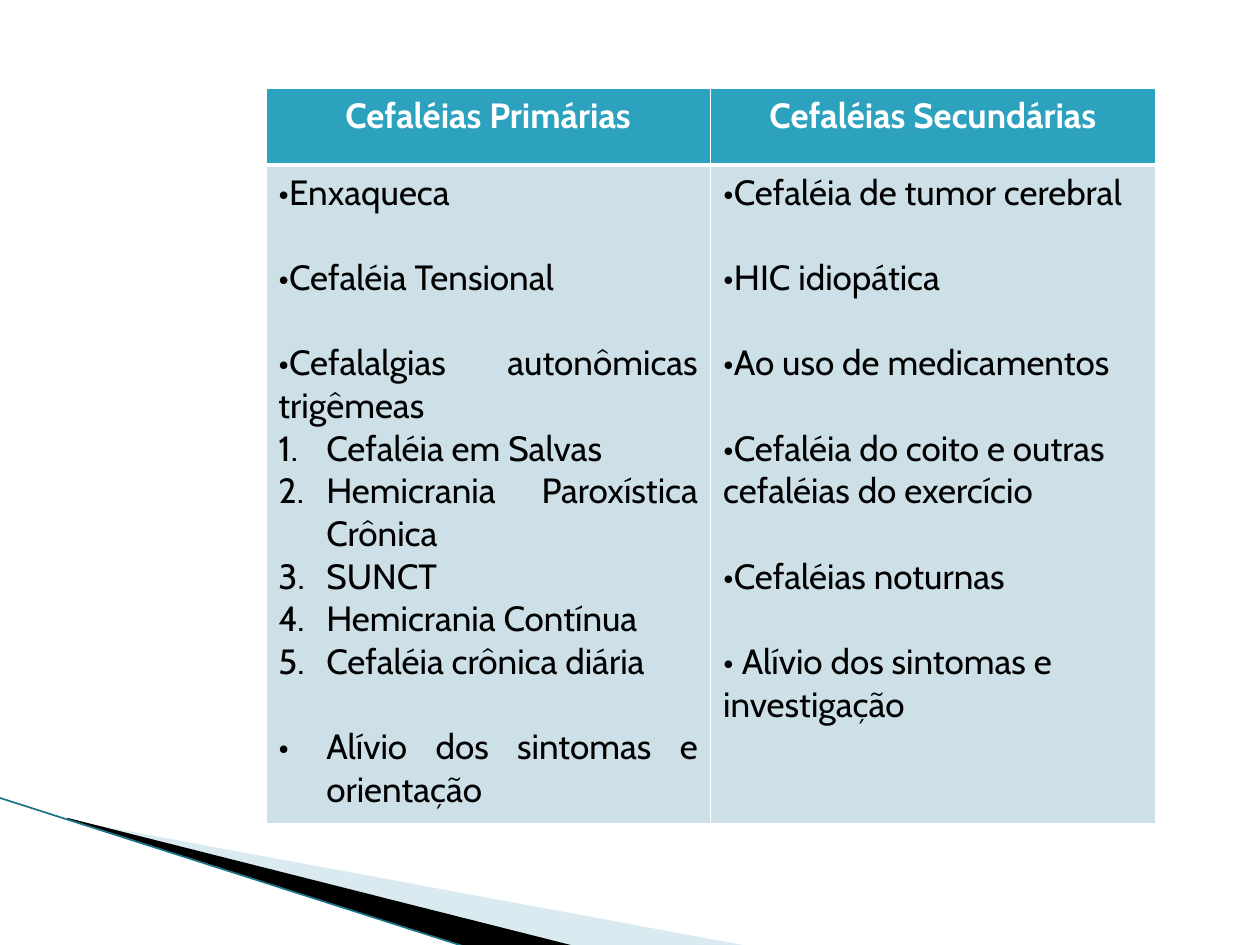
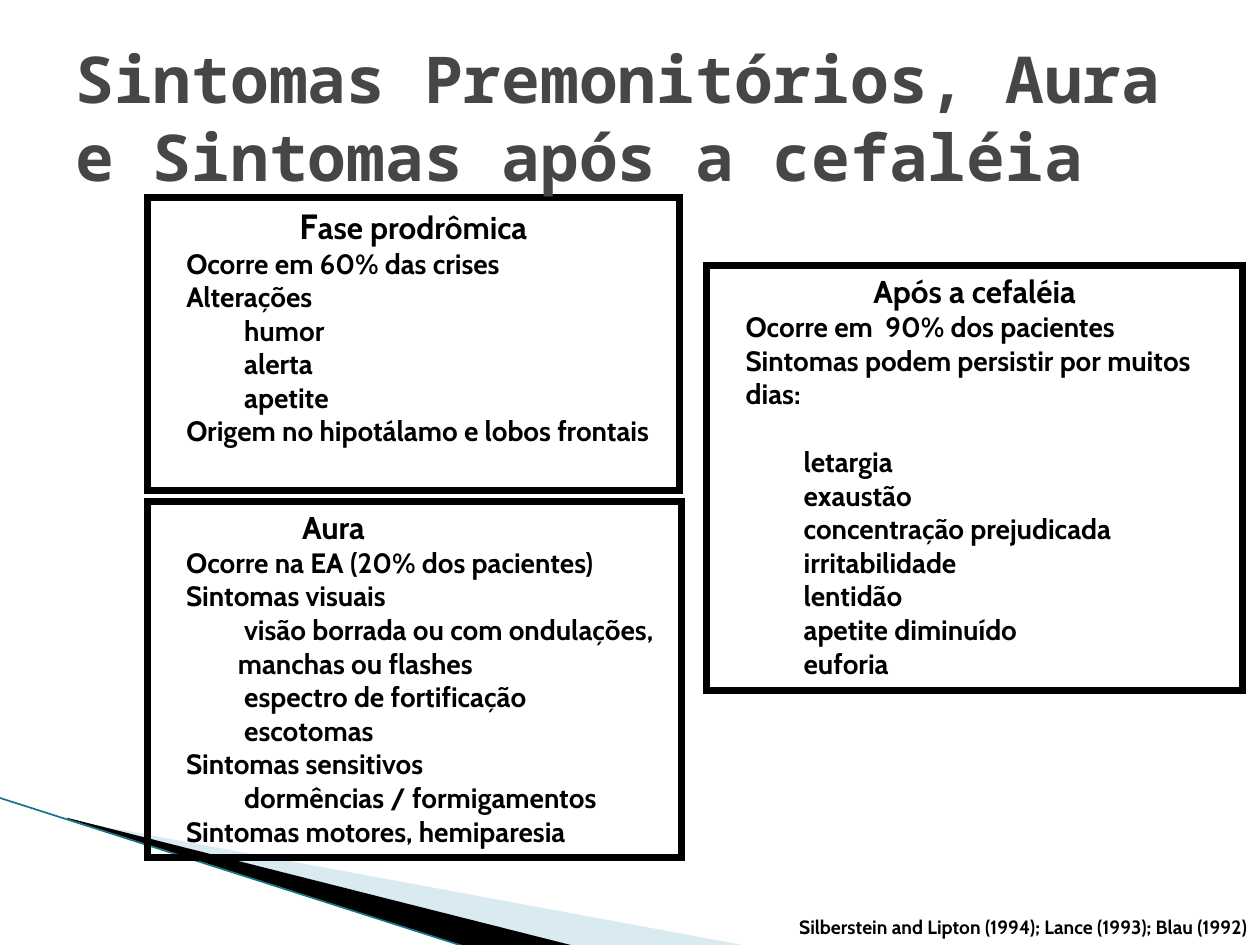
from pptx import Presentation
from pptx import util as u
from pptx.dml.color import RGBColor
from pptx.enum import shapes, text
from pptx.oxml import parse_xml
from pptx.oxml.ns import nsdecls
from dataclasses import dataclass


@dataclass(frozen=True)
class Theme:
    body: str = "Cabin"
    head: str = "Noto Sans Mono"
    black: str = "000000"
    white: str = "FFFFFF"
    gray: str = "464646"
    teal: str = "2DA2BF"
    pale: str = "CDE0E8"
    sky: str = "A0CBDC"
    rim: str = "1A7388"
    title: float = 36.9
    cell: float = 20
    lead: float = 18
    item: float = 16
    note: float = 11


T = Theme()
PX = 9144
LEFT, MID, RIGHT, JUST = (text.PP_ALIGN.LEFT, text.PP_ALIGN.CENTER,
                          text.PP_ALIGN.RIGHT, text.PP_ALIGN.JUSTIFY)

WINGS = [
    (T.sky, 40, (78, 547, 416, 158),
     [(55, 651), (595, 751), (456, 751), (55, 650)]),
    (T.black, 100, (-6, 633, 416, 92),
     [(53, 649), (457, 751), (372, 752), (54, 650)]),
]
EDGE = (-1, 633, 371, 752)

GRID = (211, 70, 706, 584)
ROWS = (61, 523)
COLS = [
    ("Cefaléias Primárias", JUST, [
        ("dot", "Enxaqueca", False),
        ("dot", "Cefaléia Tensional", True),
        ("dot", "Cefalalgias autonômicas trigêmeas", True),
        ("num", "Cefaléia em Salvas", False),
        ("num", "Hemicrania Paroxística Crônica", False),
        ("num", "SUNCT", False),
        ("num", "Hemicrania Contínua", False),
        ("num", "Cefaléia crônica diária", False),
        ("hang", "Alívio dos sintomas e orientação", True),
    ]),
    ("Cefaléias Secundárias", LEFT, [
        ("dot", "Cefaléia de tumor cerebral", False),
        ("dot", "HIC idiopática", True),
        ("dot", "Ao uso de medicamentos", True),
        ("dot", "Cefaléia do coito e outras cefaléias do exercício", True),
        ("dot", "Cefaléias noturnas", True),
        ("dot", " Alívio dos sintomas e investigação", True),
    ]),
]
FACE = f'<a:buFont {{0}} typeface="{T.body}"/>'
DOT = (FACE, '<a:buChar {0} char="•"/>')
NUM = (FACE, '<a:buAutoNum {0} type="arabicPeriod"/>')
FAINT = (f'<a:buClr {{0}}><a:srgbClr val="{T.white}"/></a:buClr>',
         '<a:buSzPct {0} val="80000"/>') + DOT
MARKS = {"dot": (DOT, 0), "num": (NUM, 38), "hang": (DOT, 38)}

TITLE = ((50, 30, 900, 125),
         "Sintomas Premonitórios, Aura e Sintomas após a cefaléia")
NOTE = ((555, 721, 445, 29),
        "Silberstein and Lipton (1994); Lance (1993); Blau (1992)")
BOXES = [
    ((117, 157, 422, 232), [("F", T.cell), ("ase prodrômica", T.lead)], MID, 0, [
        (0, "Ocorre em 60% das crises", False),
        (0, "Alterações", False),
        (1, "humor", False),
        (1, "alerta", False),
        (1, "apetite", False),
        (0, "Origem no hipotálamo e lobos frontais", False),
    ]),
    ((561, 211, 425, 337), [("Após a cefaléia", T.lead)], MID, 0, [
        (0, "Ocorre em  90% dos pacientes", False),
        (0, "Sintomas podem persistir por muitos dias:", False),
        (1, "letargia", True),
        (1, "exaustão", False),
        (1, "concentração prejudicada", False),
        (1, "irritabilidade", False),
        (1, "lentidão", False),
        (1, "apetite diminuído", False),
        (1, "euforia", False),
    ]),
    ((117, 398, 424, 283), [("Aura", T.lead)], LEFT, 113, [
        (0, "Ocorre na EA (20% dos pacientes)", False),
        (0, "Sintomas visuais", False),
        (1, "visão borrada ou com ondulações, manchas ou flashes", False),
        (1, "espectro de fortificação", False),
        (1, "escotomas", False),
        (0, "Sintomas sensitivos", False),
        (1, "dormências / formigamentos", False),
        (0, "Sintomas motores, hemiparesia", False),
    ]),
]
STEPS = ((21, 21), (62, 12))


def emu(vals):
    return [v * PX for v in vals]


def rgb(tone):
    return RGBColor.from_string(tone)


def paint(part, tone):
    part.fill.solid()
    part.fill.fore_color.rgb = rgb(tone)


def write(para, words, size, tone=T.black, bold=True, face=T.body):
    run = para.add_run()
    run.text = words
    font = run.font
    font.name, font.size, font.bold = face, u.Pt(size), bold
    font.color.rgb = rgb(tone)


def line(frame, first, align=LEFT, left=0, hang=0, gap=0, marks=()):
    para = frame.paragraphs[0] if first else frame.add_paragraph()
    para.alignment = align
    props = para._p.get_or_add_pPr()
    props.set("marL", str(left * PX))
    props.set("indent", str(-hang * PX))
    if gap:
        para.space_before = u.Pt(gap)
    for mark in marks:
        props.append(parse_xml(mark.format(nsdecls("a"))))
    return para


def frame_path(wing, spot, pts):
    wing.left, wing.top, wing.width, wing.height = emu(spot)
    trace = wing._element.spPr.find(".//{*}path")
    trace.set("w", str(spot[2]))
    trace.set("h", str(spot[3]))
    for node, (x, y) in zip(trace.findall(".//{*}pt"), pts):
        node.set("x", str(x - spot[0]))
        node.set("y", str(y - spot[1]))


def wings(slide):
    for tone, alpha, spot, pts in WINGS:
        form = slide.shapes.build_freeform(*pts[0], scale=PX)
        form.add_line_segments(pts[1:], close=False)
        wing = form.convert_to_shape()
        frame_path(wing, spot, pts)
        wing.shadow.inherit = False
        wing.line.fill.background()
        paint(wing, tone)
        if alpha < 100:
            clr = wing._element.spPr.find(".//{*}srgbClr")
            clr.append(parse_xml(f'<a:alpha {nsdecls("a")} val="{alpha * 1000}"/>'))
    edge = slide.shapes.add_connector(shapes.MSO_CONNECTOR.STRAIGHT, *emu(EDGE))
    edge.line.color.rgb = rgb(T.rim)
    edge.line.width = u.Pt(0.95)
    edge._element.spPr.append(parse_xml(f'<a:effectLst {nsdecls("a")}/>'))


def border(cell, low):
    props = cell._tc.get_or_add_tcPr()
    sides = (("lnL", 1), ("lnR", 1), ("lnT", 1), ("lnB", low))
    for spot, (side, wide) in enumerate(sides):
        props.insert(spot, parse_xml(
            f'<a:{side} {nsdecls("a")} w="{u.Pt(wide)}"><a:solidFill>'
            f'<a:srgbClr val="{T.white}"/></a:solidFill></a:{side}>'))


def table(slide):
    grid = slide.shapes.add_table(len(ROWS), len(COLS), *emu(GRID)).table
    grid.horz_banding = False
    for row, tall in zip(grid.rows, ROWS):
        row.height = tall * PX
    for col, (head, align, items) in enumerate(COLS):
        grid.columns[col].width = GRID[2] // len(COLS) * PX
        top, low = grid.cell(0, col), grid.cell(1, col)
        for cell, tone, wide in ((top, T.teal, 3), (low, T.pale, 1)):
            paint(cell, tone)
            border(cell, wide)
        write(line(top.text_frame, True, MID), head, T.cell, T.white)
        for spot, (kind, words, gap) in enumerate(items):
            marks, left = MARKS[kind]
            para = line(low.text_frame, spot == 0, align, left, left,
                        gap * 24.4, marks)
            write(para, words, T.cell, bold=False)


def label(slide, spot, words, size, align=LEFT, **look):
    frame = slide.shapes.add_textbox(*emu(spot)).text_frame
    frame.word_wrap = True
    frame.vertical_anchor = text.MSO_ANCHOR.MIDDLE
    write(line(frame, True, align), words, size, **look)


def panel(slide, spot, head, align, left, items):
    box = slide.shapes.add_shape(shapes.MSO_SHAPE.RECTANGLE, *emu(spot))
    box.shadow.inherit = False
    box.fill.background()
    box.line.color.rgb = rgb(T.black)
    box.line.width = u.Pt(4)
    rim = box._element.spPr.find("{*}ln")
    rim.append(parse_xml(f'<a:miter {nsdecls("a")} lim="800000"/>'))
    frame = box.text_frame
    frame.word_wrap = True
    frame.vertical_anchor = text.MSO_ANCHOR.TOP
    para = line(frame, True, align, left)
    for words, size in head:
        write(para, words, size)
    for level, words, gap in items:
        para = line(frame, False, LEFT, *STEPS[level], gap * 19.5, FAINT)
        para.level = level
        write(para, " " * level + words, T.item)


def main():
    deck = Presentation()
    deck.slide_width, deck.slide_height = emu((1000, 750))
    kinds, phases = [deck.slides.add_slide(deck.slide_layouts[6]) for _ in range(2)]
    for slide in (kinds, phases):
        wings(slide)
    table(kinds)
    for box in BOXES:
        panel(phases, *box)
    label(phases, *TITLE, T.title, tone=T.gray, face=T.head)
    label(phases, *NOTE, T.note, RIGHT)
    deck.save("out.pptx")


if __name__ == "__main__":
    main()
